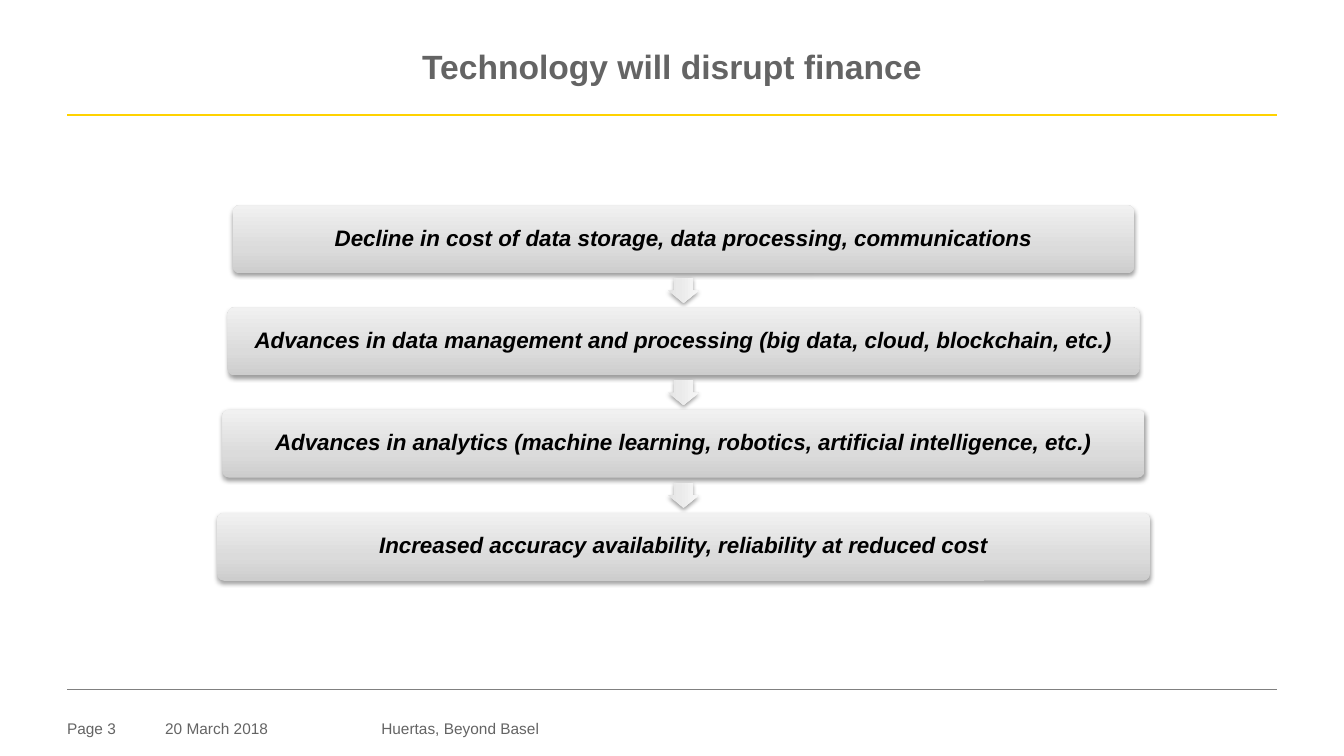
from copy import deepcopy

from lxml import etree
from pptx import Presentation
from pptx.dml.color import RGBColor
from pptx.enum import shapes, text
from pptx.oxml import ns

TITLE = "Technology will disrupt finance"
STEPS = [
    "Decline in cost of data storage, data processing, communications",
    "Advances in data management and processing (big data, cloud, blockchain, etc.)",
    "Advances in analytics (machine learning, robotics, artificial intelligence, etc.)",
    "Increased accuracy availability, reliability at reduced cost",
]
FOOTERS = [("Page 3", 67, 98), ("20 March 2018", 165, 151), ("Huertas, Beyond Basel", 381, 504)]
RULES = [(115, "FFD200", 1.5), (688, "808080", 0.25)]
BOX_GRADIENT = [(0, "CDCDCD"), (0.35, "DBDBDB"), (1, "F1F1F1")]
ARROW_GRADIENT = [(0, "E3E3E3"), (0.35, "EAEAEA"), (1, "F7F7F7")]
GREY = "646464"

PX = 9080
POINT = 12700
SLIDE_WIDTH, SLIDE_HEIGHT = 1343, 755
MARGIN, RULE_RIGHT = 67, 1276
CENTRE = 683
FIRST_TOP, LAST_OFFSET, BOX_HEIGHT = 205, 307, 68
FIRST_WIDTH, EXTRA_WIDTH = 901, 31
ARROW_LENGTH, ARROW_BREADTH = 25, 31


def px(*lengths):
    return [round(length * PX) for length in lengths]


def colour(value):
    return RGBColor.from_string(value)


def write(shape, words, size, color=GREY, bold=False, italic=False, align=text.PP_ALIGN.LEFT,
          anchor=text.MSO_ANCHOR.TOP, inset=0, spacing=1.0, wrap=True):
    frame = shape.text_frame
    frame.auto_size = text.MSO_AUTO_SIZE.NONE
    frame.word_wrap = wrap
    frame.vertical_anchor = anchor
    frame.margin_left = frame.margin_right = frame.margin_top = frame.margin_bottom = inset * PX
    paragraph = frame.paragraphs[0]
    paragraph.text = words
    paragraph.alignment = align
    paragraph.line_spacing = spacing
    font = paragraph.font
    font.name, font.size = "Arial", size * POINT
    font.bold, font.italic = bold, italic
    font.color.rgb = colour(color)


def add_raised_shape(slide, kind, bounds, gradient, adjustments):
    shape = slide.shapes.add_shape(kind, *px(*bounds))
    for index, value in enumerate(adjustments):
        shape.adjustments[index] = value
    shape.line.fill.background()
    shape.fill.gradient()
    shape.fill.gradient_angle = 90
    properties = shape._element.spPr
    stop_list = properties.find(".//" + ns.qn("a:gsLst"))
    stop_list.insert(1, deepcopy(stop_list[0]))
    for stop, (position, value) in zip(shape.fill.gradient_stops, gradient):
        stop.position = position
        stop.color.rgb = colour(value)
    shape.shadow.inherit = False
    effects = properties.find(ns.qn("a:effectLst"))
    shadow = etree.SubElement(effects, ns.qn("a:outerShdw"), blurRad="40000", dist="20000",
                              dir="5400000", rotWithShape="0")
    shade = etree.SubElement(shadow, ns.qn("a:srgbClr"), val="000000")
    etree.SubElement(shade, ns.qn("a:alpha"), val="38000")
    return shape


def add_rule(slide, top, color, width):
    rule = slide.shapes.add_connector(shapes.MSO_CONNECTOR.STRAIGHT,
                                      *px(MARGIN, top, RULE_RIGHT, top))
    rule.line.color.rgb = colour(color)
    rule.line.width = round(width * POINT)
    etree.SubElement(rule._element.spPr, ns.qn("a:effectLst"))


def add_steps(slide):
    last = len(STEPS) - 1
    tops = [FIRST_TOP + LAST_OFFSET * index // last for index in range(len(STEPS))]
    for index, (words, top) in enumerate(zip(STEPS, tops)):
        width = FIRST_WIDTH + EXTRA_WIDTH * index / last
        box = add_raised_shape(slide, shapes.MSO_SHAPE.ROUNDED_RECTANGLE,
                               (CENTRE - width / 2, top, width, BOX_HEIGHT), BOX_GRADIENT, [0.1])
        write(box, words, 16, color="000000", bold=True, italic=True, align=text.PP_ALIGN.CENTER,
              anchor=text.MSO_ANCHOR.MIDDLE, inset=7, spacing=0.9)
        if index < last:
            middle = (top + BOX_HEIGHT + tops[index + 1]) / 2
            arrow = add_raised_shape(slide, shapes.MSO_SHAPE.RIGHT_ARROW,
                                     (CENTRE - ARROW_LENGTH / 2, middle - ARROW_BREADTH / 2,
                                      ARROW_LENGTH, ARROW_BREADTH), ARROW_GRADIENT, [0.6, 0.5])
            arrow.rotation = 90


def main():
    presentation = Presentation()
    presentation.slide_width, presentation.slide_height = px(SLIDE_WIDTH, SLIDE_HEIGHT)
    slide = presentation.slides.add_slide(presentation.slide_layouts[5])
    title = slide.shapes.title
    title.left, title.top, title.width, title.height = px(MARGIN, 22, 1209, 95)
    write(title, TITLE, 24, bold=True, align=text.PP_ALIGN.CENTER,
          anchor=text.MSO_ANCHOR.MIDDLE, spacing=0.85)
    for rule in RULES:
        add_rule(slide, *rule)
    add_steps(slide)
    for words, left, width in FOOTERS:
        write(slide.shapes.add_textbox(*px(left, 718, width, 22)), words, 11)
    presentation.save("out.pptx")


if __name__ == "__main__":
    main()
